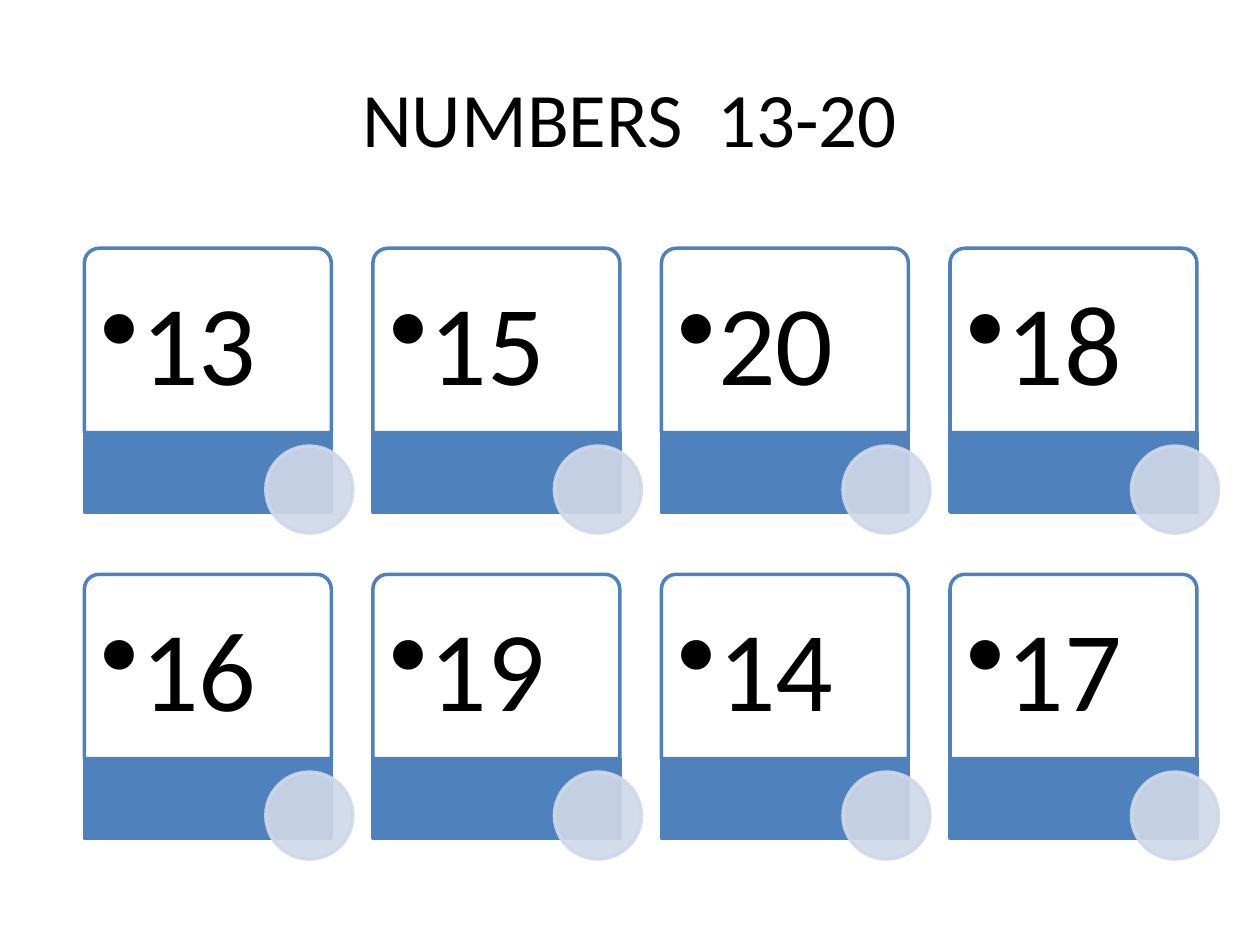
from dataclasses import dataclass

from lxml.etree import SubElement
from pptx import Presentation
from pptx.dml.color import RGBColor
from pptx.enum.shapes import MSO_SHAPE
from pptx.enum.text import MSO_ANCHOR, PP_ALIGN
from pptx.oxml.ns import qn
from pptx.shapes.autoshape import Shape
from pptx.shapes.shapetree import GroupShapes
from pptx.text.text import _Paragraph
from pptx.util import Inches, Pt

SLIDE_WIDTH, SLIDE_HEIGHT = Inches(10), Inches(7.5)
FONT = "Calibri"
COLORS = {"text": "000000", "card": "FFFFFF", "accent": "4F81BD", "badge": "D0D8E8"}
NUMBERS = [[13, 15, 20, 18], [16, 19, 14, 17]]


@dataclass(frozen=True)
class Box:
    """Position and size in percent of the slide."""

    left: float
    top: float
    width: float
    height: float

    def moved(self, right: float, down: float) -> "Box":
        return Box(self.left + right, self.top + down, self.width, self.height)

    def lengths(self) -> tuple[int, int, int, int]:
        return (
            int(SLIDE_WIDTH * self.left / 100),
            int(SLIDE_HEIGHT * self.top / 100),
            int(SLIDE_WIDTH * self.width / 100),
            int(SLIDE_HEIGHT * self.height / 100),
        )


@dataclass(frozen=True)
class Part:
    preset: MSO_SHAPE
    box: Box
    fill: str
    line: str
    fill_alpha: int = 100
    line_alpha: int = 100
    adjustments: tuple[float, ...] = ()


COLUMN_PITCH, ROW_PITCH = 22.9, 34.5
TITLE_BOX = Box(5, 4, 90, 16.67)
NUMBER_BOX = Box(7.1, 26.8, 18.9, 19.07)
CARD = Part(MSO_SHAPE.ROUND_2_SAME_RECTANGLE, Box(6.7, 26.27, 19.6, 19.5),
            "card", "accent", fill_alpha=90, adjustments=(0.08, 0))
BAND = Part(MSO_SHAPE.RECTANGLE, Box(6.7, 45.8, 19.6, 8.4), "accent", "accent")
BADGE = Part(MSO_SHAPE.OVAL, Box(21.1, 47.2, 6.9, 9.2), "badge", "badge",
             fill_alpha=90, line_alpha=90)


def set_alpha(shape: Shape, container: str, percent: int) -> None:
    if percent < 100:
        properties = shape._element.spPr
        color = properties.find(f"{container}/{qn('a:srgbClr')}")
        SubElement(color, qn("a:alpha"), val=str(percent * 1000))


def set_font(paragraph: _Paragraph, size: float) -> None:
    paragraph.font.name = FONT
    paragraph.font.size = Pt(size)
    paragraph.font.color.rgb = RGBColor.from_string(COLORS["text"])


def draw_part(shapes: GroupShapes, part: Part, right: float, down: float) -> None:
    shape = shapes.add_shape(part.preset, *part.box.moved(right, down).lengths())
    shape.shadow.inherit = False
    for index, value in enumerate(part.adjustments):
        shape.adjustments[index] = value
    shape.fill.solid()
    shape.fill.fore_color.rgb = RGBColor.from_string(COLORS[part.fill])
    shape.line.color.rgb = RGBColor.from_string(COLORS[part.line])
    shape.line.width = Pt(2)
    solid_fill = qn("a:solidFill")
    set_alpha(shape, solid_fill, part.fill_alpha)
    set_alpha(shape, f"{qn('a:ln')}/{solid_fill}", part.line_alpha)


def draw_number(shapes: GroupShapes, number: int, right: float, down: float) -> None:
    text_box = shapes.add_textbox(*NUMBER_BOX.moved(right, down).lengths())
    frame = text_box.text_frame
    frame.word_wrap = True
    frame.vertical_anchor = MSO_ANCHOR.TOP
    frame.margin_left = frame.margin_right = frame.margin_bottom = Inches(0.09)
    frame.margin_top = Inches(0.27)
    paragraph = frame.paragraphs[0]
    paragraph.text = str(number)
    paragraph.level = 1
    paragraph.line_spacing = 0.9
    properties = paragraph._p.get_or_add_pPr()
    properties.set("marL", str(Inches(0.31)))
    properties.set("indent", str(-Inches(0.31)))
    space_after = SubElement(properties, qn("a:spcAft"))
    SubElement(space_after, qn("a:spcPct"), val="15000")
    SubElement(properties, qn("a:buChar"), char="•")
    set_font(paragraph, 65)


def draw_card(shapes: GroupShapes, number: int, column: int, row: int) -> None:
    right, down = column * COLUMN_PITCH, row * ROW_PITCH
    draw_part(shapes, CARD, right, down)
    draw_number(shapes, number, right, down)
    draw_part(shapes, BAND, right, down)
    draw_part(shapes, BADGE, right, down)


def main() -> None:
    presentation = Presentation()
    presentation.slide_width, presentation.slide_height = SLIDE_WIDTH, SLIDE_HEIGHT
    slide = presentation.slides.add_slide(presentation.slide_layouts[5])

    title = slide.shapes.title
    title.left, title.top, title.width, title.height = TITLE_BOX.lengths()
    title.text_frame.vertical_anchor = MSO_ANCHOR.MIDDLE
    paragraph = title.text_frame.paragraphs[0]
    paragraph.text = "NUMBERS  13-20"
    paragraph.alignment = PP_ALIGN.CENTER
    set_font(paragraph, 44)

    cards = slide.shapes.add_group_shape()
    for row, numbers in enumerate(NUMBERS):
        for column, number in enumerate(numbers):
            draw_card(cards.shapes, number, column, row)

    presentation.save("out.pptx")


if __name__ == "__main__":
    main()
